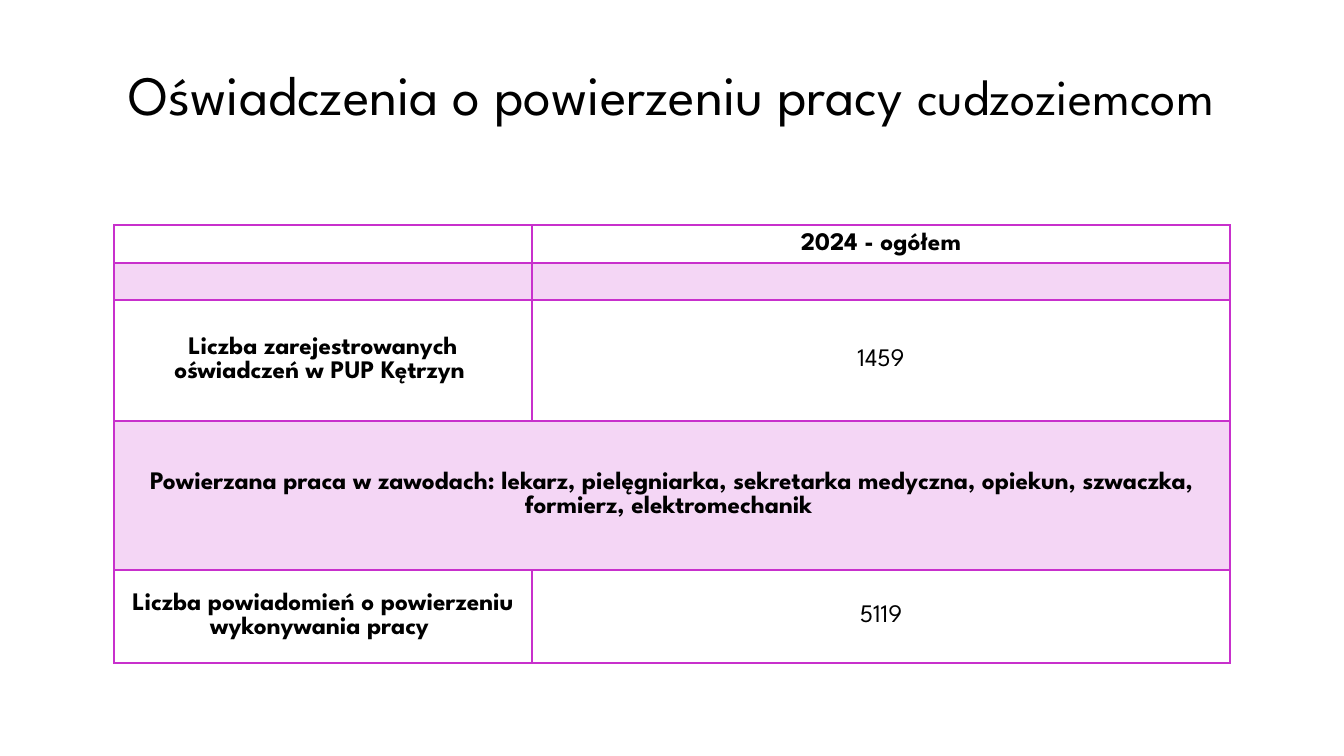
from lxml import etree
from pptx import Presentation
from pptx.dml.color import RGBColor
from pptx.enum.text import MSO_ANCHOR, MSO_AUTO_SIZE, PP_ALIGN
from pptx.oxml.ns import qn
from pptx.util import Emu, Pt

MIDDLE = MSO_ANCHOR.MIDDLE
CENTER = PP_ALIGN.CENTER
NO_AUTOFIT = MSO_AUTO_SIZE.NONE
BLACK = RGBColor(0x00, 0x00, 0x00)
MAGENTA = RGBColor(0xC8, 0x30, 0xCC)
PALE_MAGENTA = RGBColor(0xF4, 0xD6, 0xF5)
TITLE_ONLY = 5

COLUMN_WIDTHS = [418, 698]
ROW_HEIGHTS = [38, 37, 121, 149, 93]
HEADER_ROW, JOBS_ROW = 0, 3
ROWS = [
    ["", "2024 - ogółem"],
    ["", ""],
    ["Liczba zarejestrowanych oświadczeń w PUP Kętrzyn ", "1459"],
    ["Powierzana praca w zawodach: lekarz, pielęgniarka, sekretarka medyczna, "
     "opiekun, szwaczka, formierz, elektromechanik ", ""],
    ["Liczba powiadomień o powierzeniu wykonywania pracy ", "5119"],
]


class SlideBuilder:
    """Adds styled elements to the current slide."""

    font = "League Spartan"
    scale = 914400 / 100.8

    def __init__(self, deck):
        self.page = deck.slides.add_slide(deck.slide_layouts[TITLE_ONLY])

    @classmethod
    def px(cls, length):
        return Emu(round(length * cls.scale))

    def style(self, span, size, bold=False):
        span.font.name = self.font
        span.font.size = Pt(size)
        span.font.bold = bold
        span.font.color.rgb = BLACK

    def title(self, left, top, width, height, parts):
        box = self.page.shapes.title
        box.left, box.top = self.px(left), self.px(top)
        box.width, box.height = self.px(width), self.px(height)
        frame = box.text_frame
        frame.auto_size = NO_AUTOFIT
        frame.word_wrap = True
        frame.vertical_anchor = MIDDLE
        para = frame.paragraphs[0]
        para.alignment = CENTER
        for text, size in parts:
            span = para.add_run()
            span.text = text
            self.style(span, size)

    def border(self, cell, side, width):
        properties = cell._tc.get_or_add_tcPr()
        line = etree.SubElement(properties, qn(f"a:ln{side}"), w=str(Pt(width)))
        fill = etree.SubElement(line, qn("a:solidFill"))
        etree.SubElement(fill, qn("a:srgbClr"), val=str(MAGENTA))

    def cell(self, cell, text, bold, shaded, widths):
        for side, width in widths.items():
            self.border(cell, side, width)
        if shaded:
            cell.fill.solid()
            cell.fill.fore_color.rgb = PALE_MAGENTA
        else:
            cell.fill.background()
        cell.vertical_anchor = MIDDLE
        cell.margin_top = cell.margin_bottom = 0
        if text:
            cell.text_frame.text = text
            para = cell.text_frame.paragraphs[0]
            para.alignment = CENTER
            self.style(para.runs[0], 18, bold)

    def table(self, left, top, widths, heights, rows):
        frame = self.page.shapes.add_table(
            len(heights), len(widths), self.px(left), self.px(top),
            self.px(sum(widths)), self.px(sum(heights)))
        table = frame.table
        table.first_row = table.horz_banding = False
        for column, width in zip(table.columns, widths):
            column.width = self.px(width)
        for row, height in zip(table.rows, heights):
            row.height = self.px(height)
        table.cell(JOBS_ROW, 0).merge(table.cell(JOBS_ROW, len(widths) - 1))
        for r, texts in enumerate(rows):
            lines = {
                "L": 1,
                "R": 1,
                "T": 2 if r == HEADER_ROW + 1 else 1,
                "B": 2 if r == HEADER_ROW else 1,
            }
            for c, text in enumerate(texts):
                bold = c == 0 or r == HEADER_ROW
                self.cell(table.cell(r, c), text, bold, r % 2 == 1, lines)


def main():
    deck = Presentation()
    deck.slide_width = SlideBuilder.px(1344)
    deck.slide_height = SlideBuilder.px(756)
    builder = SlideBuilder(deck)
    builder.title(92, 30, 1159, 126, [
        ("Oświadczenia o powierzeniu pracy ", 39.6),
        ("cudzoziemcom", 36),
    ])
    builder.table(114, 225, COLUMN_WIDTHS, ROW_HEIGHTS, ROWS)
    deck.save("out.pptx")


if __name__ == "__main__":
    main()
